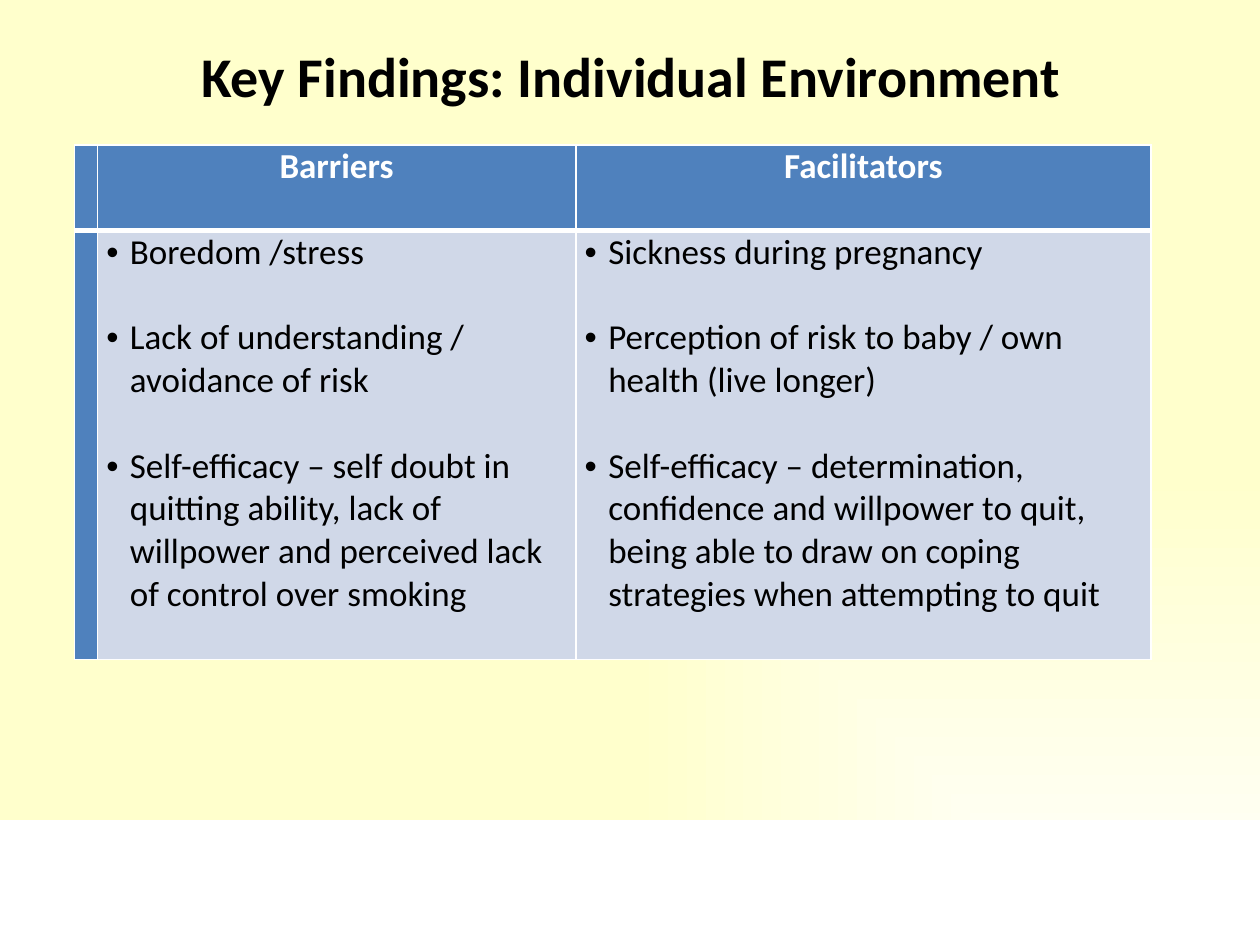
from dataclasses import dataclass

from lxml import etree
from pptx import Presentation
from pptx.dml.color import RGBColor
from pptx.enum.shapes import MSO_SHAPE
from pptx.enum.text import PP_ALIGN
from pptx.oxml.ns import qn
from pptx.util import Pt

CENTER, LEFT = PP_ALIGN.CENTER, PP_ALIGN.LEFT
RECTANGLE = MSO_SHAPE.RECTANGLE

WHITE = RGBColor(0xFF, 0xFF, 0xFF)
BLACK = RGBColor(0x00, 0x00, 0x00)
CREAM = RGBColor(0xFF, 0xFF, 0xCC)
BLUE = RGBColor(0x4F, 0x81, 0xBD)
PALE_BLUE = RGBColor(0xD0, 0xD8, 0xE8)

FONT = "Calibri"
LINE_GAP = Pt(24.4)
HANGING = Pt(13.5)
ROW_HEIGHTS = (Pt(49), Pt(245))


@dataclass
class Column:
    width: float
    heading: str = ""
    points: tuple[str, ...] = ()


COLUMNS = (
    Column(12.6),
    Column(273.4, "Barriers", (
        "Boredom /stress",
        "Lack of understanding / avoidance of risk",
        "Self-efficacy – self doubt in quitting ability, lack of willpower "
        "and perceived lack of control over smoking",
    )),
    Column(328.6, "Facilitators", (
        "Sickness during pregnancy",
        "Perception of risk to baby / own health (live longer)",
        "Self-efficacy – determination, confidence and willpower to quit, "
        "being able to draw on coping strategies when attempting to quit",
    )),
)


def style_paragraph(paragraph, size: float, color: RGBColor, bold: bool, alignment) -> None:
    paragraph.alignment = alignment
    font = paragraph.font
    font.name, font.size, font.bold = FONT, Pt(size), bold
    font.color.rgb = color


def add_bullet(paragraph) -> None:
    properties = paragraph._p.get_or_add_pPr()
    properties.set("marL", str(HANGING))
    properties.set("indent", str(-HANGING))
    etree.SubElement(properties, qn("a:buFont"), typeface="Arial")
    etree.SubElement(properties, qn("a:buChar"), char="•")


def set_borders(cell, top: float, bottom: float) -> None:
    properties = cell._tc.get_or_add_tcPr()
    widths = {"a:lnL": 1, "a:lnR": 1, "a:lnT": top, "a:lnB": bottom}
    for position, (tag, width) in enumerate(widths.items()):
        line = etree.Element(qn(tag), w=str(Pt(width)))
        fill = etree.SubElement(line, qn("a:solidFill"))
        etree.SubElement(fill, qn("a:srgbClr"), val=str(WHITE))
        properties.insert(position, line)


def format_cell(cell, color: RGBColor, top: float, bottom: float) -> None:
    cell.margin_left = cell.margin_right = Pt(5.1)
    cell.margin_top = cell.margin_bottom = Pt(0)
    cell.fill.solid()
    cell.fill.fore_color.rgb = color
    set_borders(cell, top, bottom)


def fill_points(cell, points: tuple[str, ...]) -> None:
    for index, point in enumerate(points):
        frame = cell.text_frame
        paragraph = frame.add_paragraph() if index else frame.paragraphs[0]
        paragraph.text = point
        if index:
            paragraph.space_before = LINE_GAP
        add_bullet(paragraph)
        style_paragraph(paragraph, 20, BLACK, False, LEFT)


def set_background(slide) -> None:
    fill = slide.background.fill
    fill.gradient()
    for stop, color in zip(fill.gradient_stops, (WHITE, CREAM)):
        stop.color.rgb = color
    # Rectangular gradient spreading from the bottom right corner
    gradient = slide.element.find(".//" + qn("a:gradFill"))
    linear = gradient.find(qn("a:lin"))
    spread = etree.Element(qn("a:path"), path="rect")
    etree.SubElement(spread, qn("a:fillToRect"), l="100000", t="100000")
    gradient.replace(linear, spread)


def add_footer_band(slide) -> None:
    band = slide.shapes.add_shape(RECTANGLE, Pt(0), Pt(468.6), Pt(720), Pt(71.4))
    band.shadow.inherit = False
    band.fill.solid()
    band.fill.fore_color.rgb = WHITE
    band.line.fill.background()


def add_title(slide, text: str) -> None:
    box = slide.shapes.add_textbox(Pt(36.7), Pt(20.2), Pt(648), Pt(407.5))
    box.text_frame.word_wrap = True
    paragraph = box.text_frame.paragraphs[0]
    paragraph.text = text
    style_paragraph(paragraph, 32, BLACK, True, CENTER)


def add_findings_table(slide) -> None:
    total_width = Pt(sum(column.width for column in COLUMNS))
    table = slide.shapes.add_table(
        len(ROW_HEIGHTS), len(COLUMNS), Pt(42.7), Pt(82.8), total_width, sum(ROW_HEIGHTS)
    ).table
    table.first_row = table.horz_banding = False
    for row, height in zip(table.rows, ROW_HEIGHTS):
        row.height = height
    for index, column in enumerate(COLUMNS):
        table.columns[index].width = Pt(column.width)
        header, body = table.cell(0, index), table.cell(1, index)
        format_cell(header, BLUE, 1, 3)
        format_cell(body, PALE_BLUE if column.points else BLUE, 3, 1)
        if column.heading:
            paragraph = header.text_frame.paragraphs[0]
            paragraph.text = column.heading
            style_paragraph(paragraph, 20, WHITE, True, CENTER)
        fill_points(body, column.points)


def main() -> None:
    presentation = Presentation()
    presentation.slide_width, presentation.slide_height = Pt(720), Pt(540)
    slide = presentation.slides.add_slide(presentation.slide_layouts[6])
    set_background(slide)
    add_footer_band(slide)
    add_title(slide, "Key Findings: Individual Environment")
    add_findings_table(slide)
    presentation.save("out.pptx")


if __name__ == "__main__":
    main()
